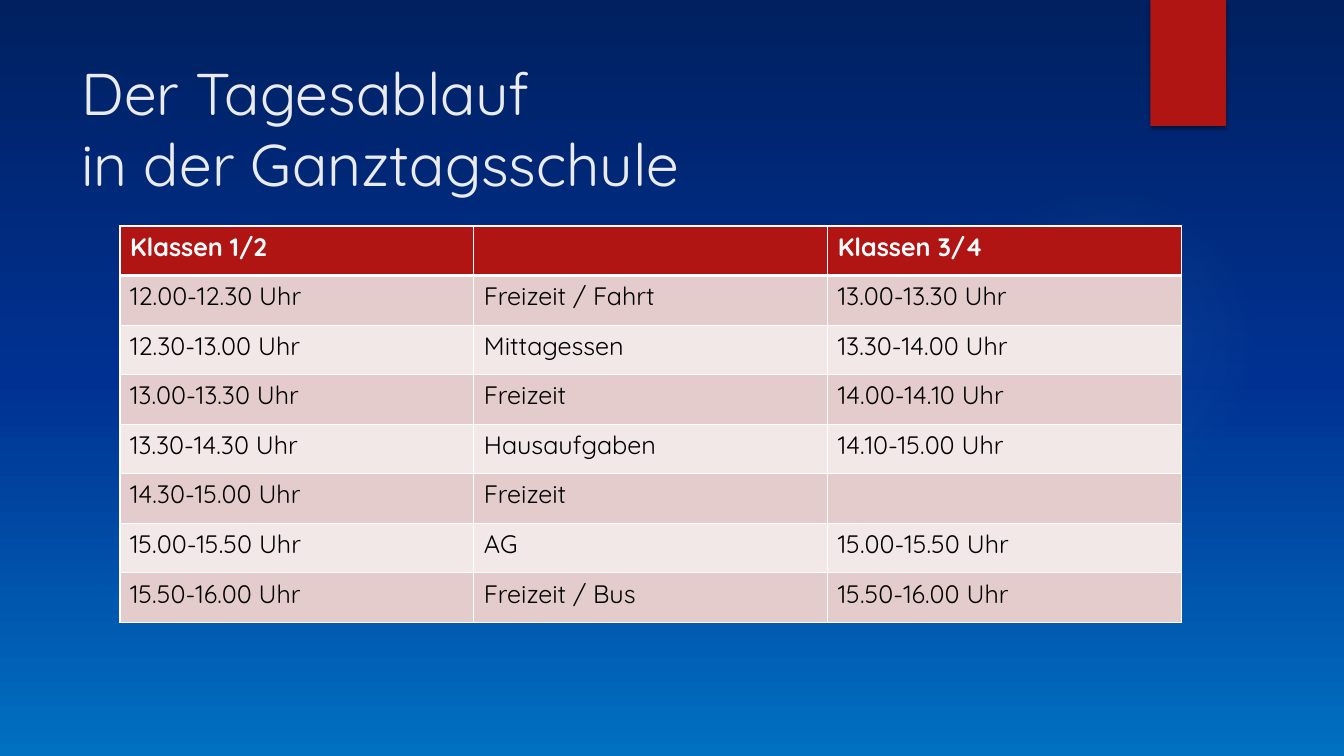
import pptx
import pptx.dml.color
import pptx.enum.shapes
import pptx.enum.text
import pptx.oxml
import pptx.oxml.ns
import pptx.util
from dataclasses import dataclass

Pt = pptx.util.Pt
qn = pptx.oxml.ns.qn
NAMESPACE = pptx.oxml.ns.nsdecls("a")


@dataclass(frozen=True)
class Theme:
    font: str = "Quicksand"
    title_size: float = 42
    table_size: float = 18
    title: str = "EBEBEB"
    accent: str = "B01513"
    header_text: str = "FFFFFF"
    body_text: str = "000000"
    border: str = "FFFFFF"
    bands: tuple = ("E4CCCC", "F2E8E7")
    glow: str = "50B9C1"
    # Stops are (position, colour, opacity), all but the colour in percent
    background: tuple = ((0, "002060", 100), (50, "003192", 100), (100, "0070C0", 100))


THEME = Theme()

SCHEDULE = [
    ("Klassen 1/2", "", "Klassen 3/4"),
    ("12.00-12.30 Uhr", "Freizeit / Fahrt", "13.00-13.30 Uhr"),
    ("12.30-13.00 Uhr", "Mittagessen", "13.30-14.00 Uhr"),
    ("13.00-13.30 Uhr", "Freizeit", "14.00-14.10 Uhr"),
    ("13.30-14.30 Uhr", "Hausaufgaben", "14.10-15.00 Uhr"),
    ("14.30-15.00 Uhr", "Freizeit", ""),
    ("15.00-15.50 Uhr", "AG", "15.00-15.50 Uhr"),
    ("15.50-16.00 Uhr", "Freizeit / Bus", "15.50-16.00 Uhr"),
]


def color(value):
    return pptx.dml.color.RGBColor.from_string(value)


def set_font(paragraph, size, value, bold=False):
    font = paragraph.font
    font.name = THEME.font
    font.size = Pt(size)
    font.bold = bold
    font.color.rgb = color(value)


def set_gradient(fill, parent, stops, direction):
    """Fill the parent element with any number of gradient stops."""
    fill.solid()
    stop_xml = "".join(
        f'<a:gs pos="{position * 1000}"><a:srgbClr val="{value}">'
        f'<a:alpha val="{opacity * 1000}"/></a:srgbClr></a:gs>'
        for position, value, opacity in stops
    )
    gradient = pptx.oxml.parse_xml(
        f'<a:gradFill {NAMESPACE} rotWithShape="1"><a:gsLst>{stop_xml}</a:gsLst>{direction}</a:gradFill>'
    )
    parent.replace(parent.find(qn("a:solidFill")), gradient)


def add_background(slide):
    fill = slide.background.fill
    fill.solid()
    properties = next(slide.element.iter(qn("p:bgPr")))
    set_gradient(fill, properties, THEME.background, '<a:lin ang="5400000" scaled="0"/>')


def add_plain_shape(slide, kind, left, top, width, height):
    shape = slide.shapes.add_shape(kind, Pt(left), Pt(top), Pt(width), Pt(height))
    shape.shadow.inherit = False
    shape.line.fill.background()
    return shape


def add_glow(slide, left, top, diameter):
    oval = pptx.enum.shapes.MSO_SHAPE.OVAL
    shape = add_plain_shape(slide, oval, left, top, diameter, diameter)
    stops = [(0, THEME.glow, 7), (36, THEME.glow, 6), (69, THEME.glow, 0), (100, THEME.glow, 0)]
    center = '<a:path path="circle"><a:fillToRect l="50000" t="50000" r="50000" b="50000"/></a:path>'
    set_gradient(shape.fill, shape.element.spPr, stops, center)


def add_ribbon(slide, left, top, width, height):
    rectangle = pptx.enum.shapes.MSO_SHAPE.RECTANGLE
    shape = add_plain_shape(slide, rectangle, left, top, width, height)
    shape.fill.solid()
    shape.fill.fore_color.rgb = color(THEME.accent)
    shadow = pptx.oxml.parse_xml(
        f'<a:outerShdw {NAMESPACE} blurRad="{Pt(3)}" dist="{Pt(2)}" dir="5400000" rotWithShape="0">'
        '<a:srgbClr val="000000"><a:alpha val="45000"/></a:srgbClr></a:outerShdw>'
    )
    shape.element.spPr.find(qn("a:effectLst")).append(shadow)


def add_title(slide, text, left, top, width, height):
    box = slide.shapes.add_textbox(Pt(left), Pt(top), Pt(width), Pt(height))
    frame = box.text_frame
    frame.word_wrap = True
    frame.vertical_anchor = pptx.enum.text.MSO_ANCHOR.MIDDLE
    frame.text = text
    set_font(frame.paragraphs[0], THEME.title_size, THEME.title)


def set_borders(cell, top, bottom):
    properties = cell._tc.get_or_add_tcPr()
    widths = {"lnL": 1, "lnR": 1, "lnT": top, "lnB": bottom}
    for index, (side, width) in enumerate(widths.items()):
        line = pptx.oxml.parse_xml(
            f'<a:{side} {NAMESPACE} w="{Pt(width)}"><a:solidFill>'
            f'<a:srgbClr val="{THEME.border}"/></a:solidFill></a:{side}>'
        )
        properties.insert(index, line)


def add_schedule(slide, rows, left, top, column_width, row_height):
    column_count = len(rows[0])
    table = slide.shapes.add_table(
        len(rows), column_count, Pt(left), Pt(top),
        Pt(column_width * column_count), Pt(row_height * len(rows)),
    ).table
    for column in table.columns:
        column.width = Pt(column_width)
    for row_index, texts in enumerate(rows):
        table.rows[row_index].height = Pt(row_height)
        is_header = row_index == 0
        fill = THEME.accent if is_header else THEME.bands[(row_index - 1) % 2]
        text_color = THEME.header_text if is_header else THEME.body_text
        for column_index, text in enumerate(texts):
            cell = table.cell(row_index, column_index)
            cell.text = text
            set_font(cell.text_frame.paragraphs[0], THEME.table_size, text_color, is_header)
            cell.fill.solid()
            cell.fill.fore_color.rgb = color(fill)
            # The rule below the header is heavier than the others
            set_borders(cell, 3 if row_index == 1 else 1, 3 if is_header else 1)


def main():
    presentation = pptx.Presentation()
    presentation.slide_width = Pt(960)
    presentation.slide_height = Pt(540)
    slide = presentation.slides.add_slide(presentation.slide_layouts[6])

    # Backdrop
    add_background(slide)
    add_glow(slide, 677.5, 131.8, 221.8)
    add_ribbon(slide, 821.8, 0, 54, 90)

    # Title and timetable
    add_title(slide, "Der Tagesablauf\vin der Ganztagsschule", 51, 36, 741, 110)
    add_schedule(slide, SCHEDULE, 85.7, 161.5, 252.8, 35.4)

    presentation.save("out.pptx")


if __name__ == "__main__":
    main()
